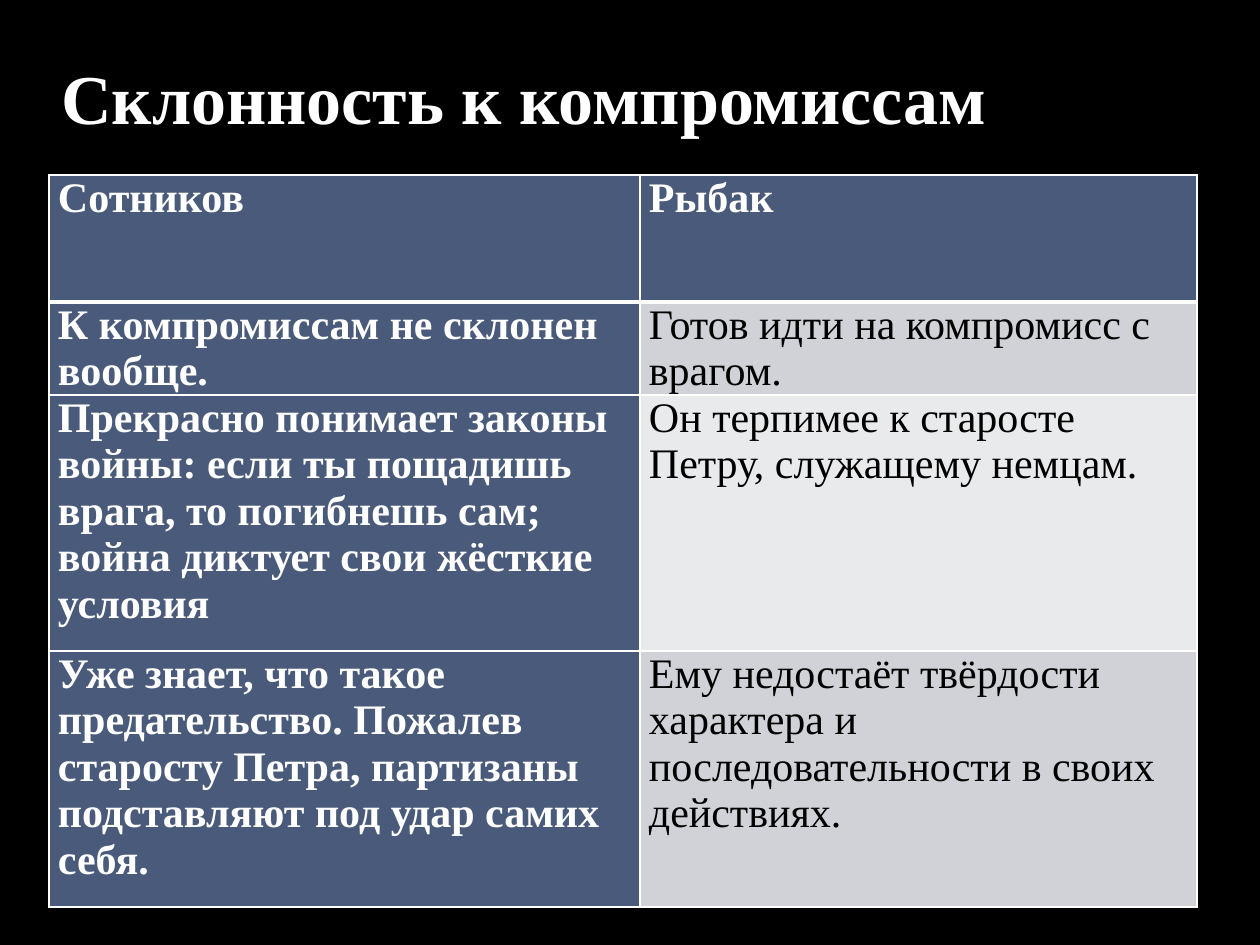
import pptx
import pptx.dml.color
import pptx.enum.text
import pptx.oxml
import pptx.oxml.ns
import pptx.util

FONT = "Times New Roman"
WHITE, BLACK, NAVY = "FFFFFF", "000000", "4A5A7A"
BANDS = ["D0D2D7", "E9EAEC"]
COLUMNS = [591, 557]
ROWS = [127, 86, 256, 256]
TEXTS = [
    ("Сотников", "Рыбак"),
    ("К компромиссам не склонен вообще.", "Готов идти на компромисс с врагом."),
    ("Прекрасно понимает законы войны: если ты пощадишь врага, то погибнешь сам; "
     "война диктует свои жёсткие условия",
     "Он терпимее к старосте Петру, служащему немцам."),
    ("Уже знает, что такое предательство. Пожалев старосту Петра, партизаны "
     "подставляют под удар самих себя.",
     "Ему недостаёт твёрдости характера и последовательности в своих действиях."),
]


def px(n):
    return pptx.util.Emu(round(n * 914400 / 126))


def rgb(value):
    return pptx.dml.color.RGBColor.from_string(value)


def set_attrs(obj, values):
    for name, value in values.items():
        setattr(obj, name, value)


def write(tf, text, size, color, bold):
    r = tf.paragraphs[0].add_run()
    r.text = text
    set_attrs(r.font, {"name": FONT, "size": pptx.util.Pt(size), "bold": bold})
    r.font.color.rgb = rgb(color)


def add_border(cell, side, points):
    cell._tc.get_or_add_tcPr().append(pptx.oxml.parse_xml(
        f'<a:ln{side} {pptx.oxml.ns.nsdecls("a")} w="{pptx.util.Pt(points)}">'
        f'<a:solidFill><a:srgbClr val="{WHITE}"/></a:solidFill></a:ln{side}>'))


def add_title(s, x, y, w, h):
    sp = s.shapes.add_textbox(px(x), px(y), px(w), px(h))
    tf = sp.text_frame
    set_attrs(tf, {"word_wrap": True,
                   "vertical_anchor": pptx.enum.text.MSO_ANCHOR.BOTTOM})
    write(tf, "Склонность к компромиссам", 40, WHITE, True)


def fill_cell(cell, row, col):
    dark = row == 0 or col == 0
    set_attrs(cell, {"margin_left": px(9), "margin_right": px(9),
                     "margin_top": 0, "margin_bottom": 0})
    for side in "LRTB":
        heavy = (side, row) in (("B", 0), ("T", 1))
        add_border(cell, side, 3 if heavy else 1)
    cell.fill.solid()
    cell.fill.fore_color.rgb = rgb(NAVY if dark else BANDS[(row - 1) % 2])
    write(cell.text_frame, TEXTS[row][col], 24, WHITE if dark else BLACK, dark)


def add_comparison(s, x, y):
    table = s.shapes.add_table(len(ROWS), len(COLUMNS), px(x), px(y),
                               px(sum(COLUMNS)), px(sum(ROWS))).table
    for column, width in zip(table.columns, COLUMNS):
        column.width = px(width)
    for row, height in enumerate(ROWS):
        table.rows[row].height = px(height)
        for col in range(len(COLUMNS)):
            fill_cell(table.cell(row, col), row, col)


def main():
    prs = pptx.Presentation()
    set_attrs(prs, {"slide_width": px(1260), "slide_height": px(945)})
    s = prs.slides.add_slide(prs.slide_layouts[6])
    s.background.fill.solid()
    s.background.fill.fore_color.rgb = rgb(BLACK)
    add_comparison(s, 49, 175)
    add_title(s, 49, 32, 1058, 113)
    prs.save("out.pptx")


if __name__ == "__main__":
    main()
